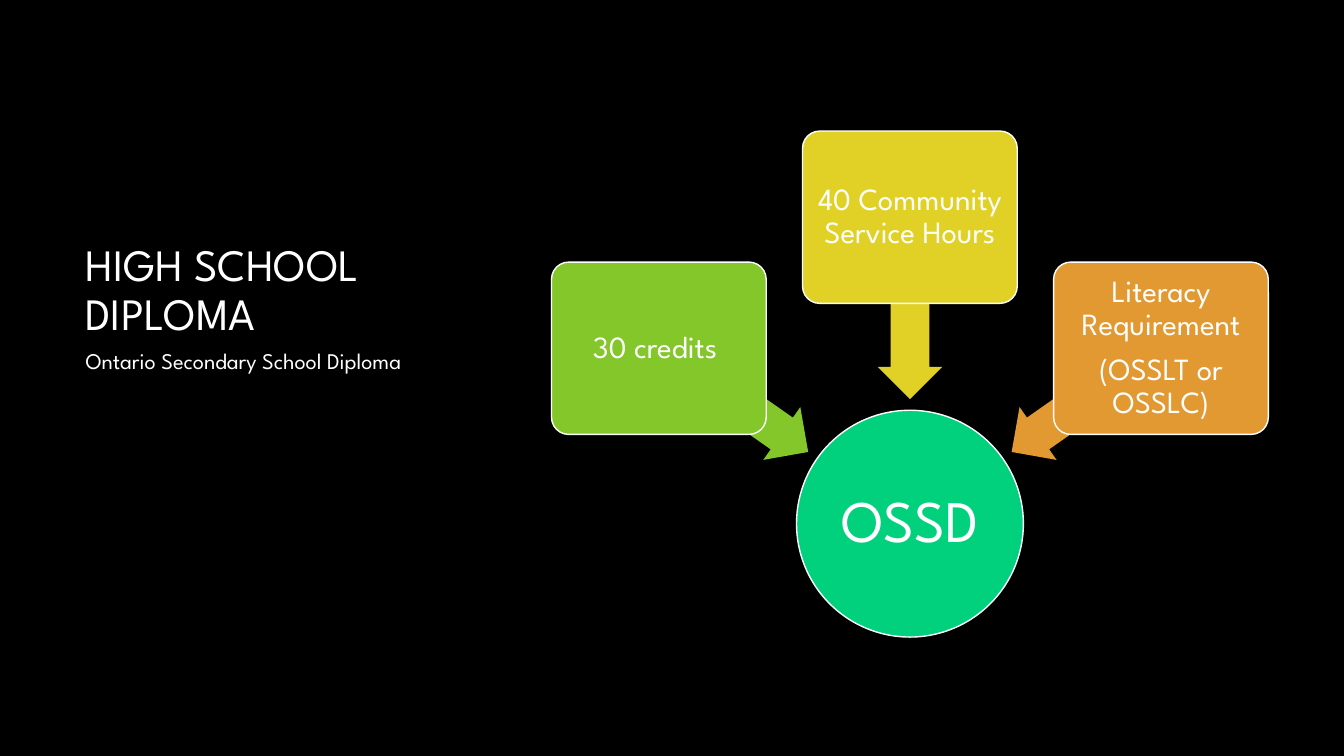
from pptx import Presentation
from pptx.dml.color import RGBColor
from pptx.enum.shapes import MSO_SHAPE
from pptx.enum.text import MSO_ANCHOR, PP_ALIGN
from pptx.util import Emu, Pt

PX = 9144  # 100 px to the inch
FONT = "League Spartan"
BLACK = RGBColor(0x00, 0x00, 0x00)
WHITE = RGBColor(0xFF, 0xFF, 0xFF)
EMERALD = RGBColor(0x01, 0xD1, 0x7D)
GREEN = RGBColor(0x84, 0xC7, 0x2A)
YELLOW = RGBColor(0xE1, 0xD1, 0x26)
ORANGE = RGBColor(0xE2, 0x99, 0x32)

ELLIPSE = MSO_SHAPE.OVAL
ROUNDED = MSO_SHAPE.ROUNDED_RECTANGLE
LEFT_ARROW = MSO_SHAPE.LEFT_ARROW
TOP, MIDDLE, BOTTOM = MSO_ANCHOR.TOP, MSO_ANCHOR.MIDDLE, MSO_ANCHOR.BOTTOM
LEFT, CENTER = PP_ALIGN.LEFT, PP_ALIGN.CENTER

# Text, colour, offset of box centre, offset of arrow centre, arrow rotation.
# Offsets are measured from the centre of the circle.
REQUIREMENTS = [
    (["30 credits "], GREEN, (-249, -174), (-175, -123), 215),
    (["40 Community Service Hours"], YELLOW, (0, -304), (0, -214), 270),
    (["Literacy Requirement", "(OSSLT or OSSLC)"], ORANGE, (249, -174), (175, -123), 325),
]


def px(*lengths):
    return [Emu(round(length * PX)) for length in lengths]


def write(frame, lines, size, anchor, align, margins, space_after=0):
    frame.word_wrap = True
    frame.vertical_anchor = anchor
    horizontal, vertical = px(*margins)
    frame.margin_left = frame.margin_right = horizontal
    frame.margin_top = frame.margin_bottom = vertical
    for index, line in enumerate(lines):
        paragraph = frame.paragraphs[0] if index == 0 else frame.add_paragraph()
        paragraph.alignment = align
        paragraph.line_spacing = 0.9
        paragraph.space_after = Pt(space_after)
        run = paragraph.add_run()
        run.text = line
        run.font.name = FONT
        run.font.size = Pt(size)
        run.font.color.rgb = WHITE


def add_centred_shape(slide, kind, center, size, color, outlined=True):
    (x, y), (width, height) = center, size
    shape = slide.shapes.add_shape(
        kind, *px(x - width / 2, y - height / 2, width, height))
    shape.shadow.inherit = False
    shape.fill.solid()
    shape.fill.fore_color.rgb = color
    if outlined:
        shape.line.color.rgb = WHITE
        shape.line.width = Pt(1)
    else:
        shape.line.fill.background()
    return shape


def add_heading(slide, left, top, width, title_height, subtitle_height):
    title = slide.shapes.add_textbox(*px(left, top, width, title_height))
    write(title.text_frame, ["HIGH SCHOOL DIPLOMA"], 32, BOTTOM, LEFT, (10, 5))
    subtitle = slide.shapes.add_textbox(
        *px(left, top + title_height, width, subtitle_height))
    write(subtitle.text_frame, ["Ontario Secondary School Diploma"], 16, TOP, LEFT, (10, 5))


def add_diagram(slide, left, top, width, height):
    """Draw the requirements around a circle at the bottom centre of the box."""
    diameter = 225
    center_x, center_y = left + width / 2, top + height - diameter / 2

    def from_center(offset):
        return center_x + offset[0], center_y + offset[1]

    circle = add_centred_shape(
        slide, ELLIPSE, (center_x, center_y), (diameter, diameter), EMERALD)
    write(circle.text_frame, ["OSSD"], 42, MIDDLE, CENTER, (3, 3))

    for lines, color, box_offset, arrow_offset, rotation in REQUIREMENTS:
        arrow = add_centred_shape(
            slide, LEFT_ARROW, from_center(arrow_offset), (181, 64), color, outlined=False)
        arrow.adjustments[0] = 0.6
        arrow.adjustments[1] = 0.5
        arrow.rotation = rotation
        box = add_centred_shape(slide, ROUNDED, from_center(box_offset), (213, 171), color)
        box.adjustments[0] = 0.1
        write(box.text_frame, lines, 22, MIDDLE, CENTER, (5, 5), space_after=8)


def main():
    presentation = Presentation()
    presentation.slide_width, presentation.slide_height = px(1333, 750)
    slide = presentation.slides.add_slide(presentation.slide_layouts[6])
    slide.background.fill.solid()
    slide.background.fill.fore_color.rgb = BLACK
    add_heading(slide, 75, 167, 450, 175, 338)
    add_diagram(slide, 547, 130, 711, 502)
    presentation.save("out.pptx")


if __name__ == "__main__":
    main()
